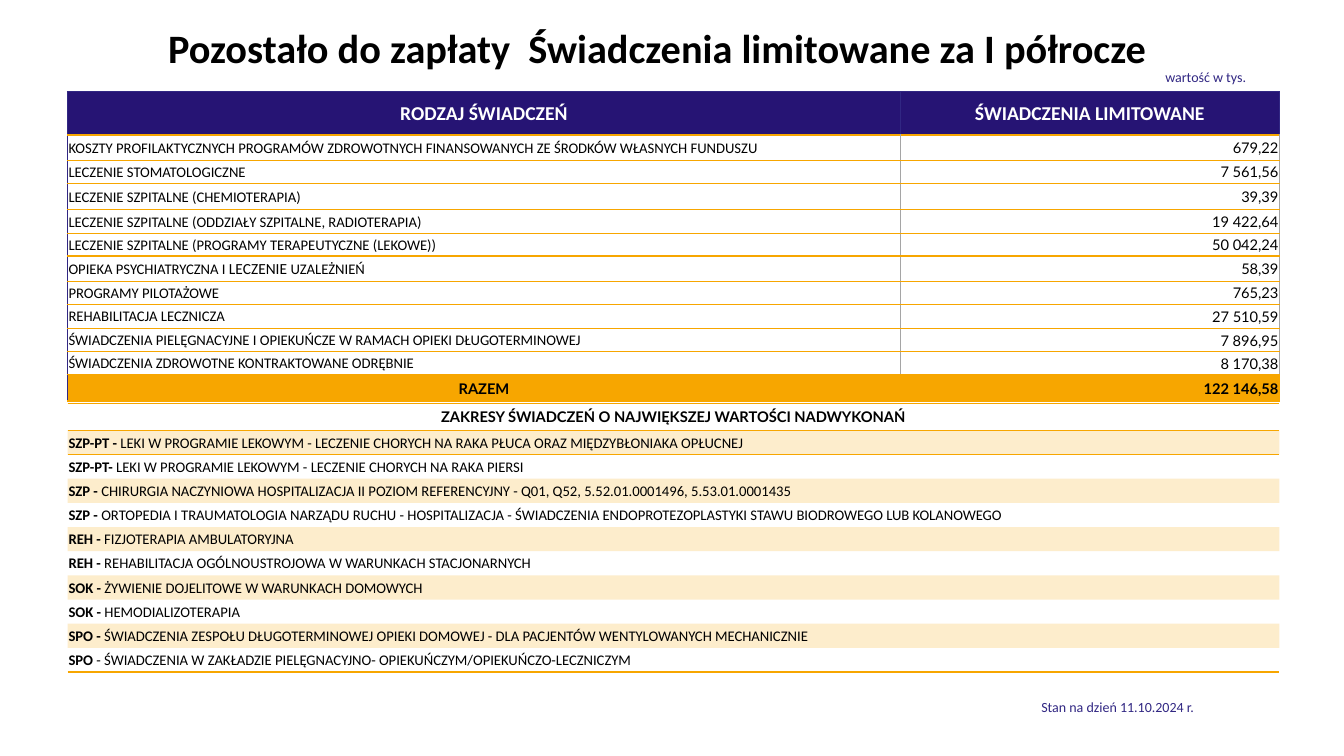
from lxml.etree import SubElement
from pptx import Presentation
from pptx.dml.color import RGBColor
from pptx.enum.text import MSO_ANCHOR, PP_ALIGN
from pptx.oxml.ns import qn
from pptx.util import Inches, Pt

NAVY = RGBColor(0x26, 0x14, 0x74)
INDIGO = RGBColor(0x31, 0x27, 0x83)
ORANGE = RGBColor(0xF7, 0xA6, 0x00)
GRAY = RGBColor(0xA5, 0xA5, 0xA5)
WHITE = RGBColor(0xFF, 0xFF, 0xFF)
BLACK = RGBColor(0x00, 0x00, 0x00)

TITLE = "Pozostało do zapłaty  Świadczenia limitowane za I półrocze "
CAPTIONS = [
    ("Stan na dzień 11.10.2024 r.", (10.23, 6.88, 2.46, 0.27)),
    ("wartość w tys.", (11.46, 0.63, 1.11, 0.27)),
]
LIMITS_HEADER = ("RODZAJ ŚWIADCZEŃ", "ŚWIADCZENIA LIMITOWANE")
LIMITS = [
    ("KOSZTY PROFILAKTYCZNYCH PROGRAMÓW ZDROWOTNYCH FINANSOWANYCH ZE ŚRODKÓW WŁASNYCH FUNDUSZU", "679,22"),
    ("LECZENIE STOMATOLOGICZNE", "7 561,56"),
    ("LECZENIE SZPITALNE (CHEMIOTERAPIA)", "39,39"),
    ("LECZENIE SZPITALNE (ODDZIAŁY SZPITALNE, RADIOTERAPIA)", "19 422,64"),
    ("LECZENIE SZPITALNE (PROGRAMY TERAPEUTYCZNE (LEKOWE))", "50 042,24"),
    ("OPIEKA PSYCHIATRYCZNA I LECZENIE UZALEŻNIEŃ", "58,39"),
    ("PROGRAMY PILOTAŻOWE", "765,23"),
    ("REHABILITACJA LECZNICZA", "27 510,59"),
    ("ŚWIADCZENIA PIELĘGNACYJNE I OPIEKUŃCZE W RAMACH OPIEKI DŁUGOTERMINOWEJ", "7 896,95"),
    ("ŚWIADCZENIA ZDROWOTNE KONTRAKTOWANE ODRĘBNIE", "8 170,38"),
]
LIMITS_TOTAL = ("RAZEM", "122 146,58")
LIMITS_COLUMNS = [8.26, 3.76]
LIMITS_HEIGHTS = [0.43, 0.25, 0.23, 0.26, 0.24, 0.22, 0.25, 0.23, 0.24, 0.23, 0.23, 0.26]

SCOPES_HEADER = "ZAKRESY ŚWIADCZEŃ O NAJWIĘKSZEJ WARTOŚCI NADWYKONAŃ"
SCOPES = [
    ("SZP-PT - ", "LEKI W PROGRAMIE LEKOWYM - LECZENIE CHORYCH NA RAKA PŁUCA ORAZ MIĘDZYBŁONIAKA OPŁUCNEJ"),
    ("SZP-PT- ", "LEKI W PROGRAMIE LEKOWYM - LECZENIE CHORYCH NA RAKA PIERSI"),
    ("SZP - ", "CHIRURGIA NACZYNIOWA HOSPITALIZACJA II POZIOM REFERENCYJNY - Q01, Q52, 5.52.01.0001496, 5.53.01.0001435"),
    ("SZP - ", "ORTOPEDIA I TRAUMATOLOGIA NARZĄDU RUCHU - HOSPITALIZACJA - ŚWIADCZENIA ENDOPROTEZOPLASTYKI STAWU BIODROWEGO LUB KOLANOWEGO"),
    ("REH - ", "FIZJOTERAPIA AMBULATORYJNA"),
    ("REH - ", "REHABILITACJA OGÓLNOUSTROJOWA W WARUNKACH STACJONARNYCH"),
    ("SOK - ", "ŻYWIENIE DOJELITOWE W WARUNKACH DOMOWYCH"),
    ("SOK - ", "HEMODIALIZOTERAPIA"),
    ("SPO - ", "ŚWIADCZENIA ZESPOŁU DŁUGOTERMINOWEJ OPIEKI DOMOWEJ - DLA PACJENTÓW WENTYLOWANYCH MECHANICZNIE"),
    ("SPO ", "- ŚWIADCZENIA W ZAKŁADZIE PIELĘGNACYJNO- OPIEKUŃCZYM/OPIEKUŃCZO-LECZNICZYM"),
]
SCOPES_HEIGHTS = [0.27] + [0.24] * len(SCOPES)

TITLE_FONT = {"name": "Calibri", "size": Pt(28.8), "bold": True}
CAPTION_FONT = {"name": "Calibri", "size": Pt(10), "bold": False}
HEADER_FONT = {"name": "Calibri", "size": Pt(14), "bold": True}
LABEL_FONT = {"name": "Calibri", "size": Pt(10.5), "bold": False}
CODE_FONT = LABEL_FONT | {"bold": True}
VALUE_FONT = LABEL_FONT | {"name": "Lato"}
TOTAL_FONT = VALUE_FONT | {"bold": True}
LARGER_LABEL_FONT = LABEL_FONT | {"size": Pt(11)}
CELL_FORMAT = {
    "margin_left": Inches(0.01), "margin_right": Inches(0.01),
    "margin_top": Inches(0.01), "margin_bottom": 0,
    "vertical_anchor": MSO_ANCHOR.MIDDLE,
}
PLAIN_STYLE = "{2D5ABB26-0587-4C30-8999-92F81FD0307C}"


def apply(target, values):
    for attribute, value in values.items():
        setattr(target, attribute, value)


def write(paragraph, runs, color=BLACK, align=PP_ALIGN.LEFT):
    paragraph.alignment = align
    for words, font in runs:
        run = paragraph.add_run()
        run.text = words
        apply(run.font, font)
        run.font.color.rgb = color


def add_grid(slide, left, top, widths, heights):
    frame = slide.shapes.add_table(
        len(heights), len(widths), Inches(left), Inches(top),
        Inches(sum(widths)), Inches(sum(heights)))
    grid = frame.table
    apply(grid, {"first_row": False, "horz_banding": False})
    grid._tbl.tblPr.find(qn("a:tableStyleId")).text = PLAIN_STYLE
    for column, width in zip(grid.columns, widths):
        column.width = Inches(width)
    for row, height in zip(grid.rows, heights):
        row.height = Inches(height)
    return grid


def fill_cell(cell, runs, borders, fill=None, alpha=None, color=BLACK, align=PP_ALIGN.LEFT):
    apply(cell, CELL_FORMAT)
    write(cell.text_frame.paragraphs[0], runs, color, align)
    properties = cell._tc.get_or_add_tcPr()
    for side in "LRTB":
        if side in borders:
            line_color, points = borders[side]
            line = SubElement(properties, qn(f"a:ln{side}"), w=str(Pt(points)))
            SubElement(SubElement(line, qn("a:solidFill")), qn("a:srgbClr"), val=str(line_color))
    if fill is None:
        cell.fill.background()
        return
    cell.fill.solid()
    cell.fill.fore_color.rgb = fill
    if alpha:
        tint = properties.find(qn("a:solidFill")).find(qn("a:srgbClr"))
        SubElement(tint, qn("a:alpha"), val=str(alpha * 1000))


def label_runs(label):
    before, larger, after = label.partition("I LECZENIE")
    if not larger:
        return [(label, LABEL_FONT)]
    return [(before + "I ", LABEL_FONT), ("LECZENIE", LARGER_LABEL_FONT), (after, LABEL_FONT)]


def add_limits(slide):
    grid = add_grid(slide, 0.67, 0.91, LIMITS_COLUMNS, LIMITS_HEIGHTS)
    rule, edge, divider = (ORANGE, 1), (INDIGO, 1), (GRAY, 0.5)
    header_borders = {"L": edge, "R": edge, "T": edge, "B": rule}
    for column, heading in enumerate(LIMITS_HEADER):
        fill_cell(grid.cell(0, column), [(heading, HEADER_FONT)], header_borders,
                  NAVY, color=WHITE, align=PP_ALIGN.CENTER)
    label_borders = {"L": edge, "R": divider, "T": rule, "B": rule}
    value_borders = label_borders | {"L": divider}
    for row, (label, value) in enumerate(LIMITS, 1):
        fill_cell(grid.cell(row, 0), label_runs(label), label_borders)
        fill_cell(grid.cell(row, 1), [(value, VALUE_FONT)], value_borders, align=PP_ALIGN.RIGHT)
    total_row = len(LIMITS) + 1
    total_borders = {"L": edge, "R": rule, "T": rule, "B": rule}
    for column, align in enumerate((PP_ALIGN.CENTER, PP_ALIGN.RIGHT)):
        borders = total_borders if column == 0 else total_borders | {"L": rule}
        fill_cell(grid.cell(total_row, column), [(LIMITS_TOTAL[column], TOTAL_FONT)],
                  borders, ORANGE, align=align)


def add_scopes(slide):
    grid = add_grid(slide, 0.67, 4, [sum(LIMITS_COLUMNS)], SCOPES_HEIGHTS)
    rule = (ORANGE, 1)
    fill_cell(grid.cell(0, 0), [(SCOPES_HEADER, TOTAL_FONT)], {"T": rule, "B": rule},
              align=PP_ALIGN.CENTER)
    for row, (code, scope) in enumerate(SCOPES, 1):
        borders = {1: {"T": rule}, len(SCOPES): {"B": rule}}.get(row, {})
        fill_cell(grid.cell(row, 0), [(code, CODE_FONT), (scope, LABEL_FONT)], borders,
                  ORANGE if row % 2 else None, alpha=20)


def main():
    deck = Presentation()
    apply(deck, {"slide_width": Inches(13.33), "slide_height": Inches(7.5)})
    slide = deck.slides.add_slide(deck.slide_layouts[5])
    title = slide.shapes.title
    apply(title, {"left": Inches(1.49), "top": Inches(0.11),
                  "width": Inches(10.15), "height": Inches(0.79)})
    title.text_frame.vertical_anchor = MSO_ANCHOR.MIDDLE
    heading = title.text_frame.paragraphs[0]
    heading.line_spacing = 0.9
    write(heading, [(TITLE, TITLE_FONT)], align=PP_ALIGN.CENTER)
    add_limits(slide)
    add_scopes(slide)
    for words, place in CAPTIONS:
        caption = slide.shapes.add_textbox(*map(Inches, place)).text_frame
        caption.word_wrap = True
        write(caption.paragraphs[0], [(words, CAPTION_FONT)], INDIGO)
    deck.save("out.pptx")


if __name__ == "__main__":
    main()
